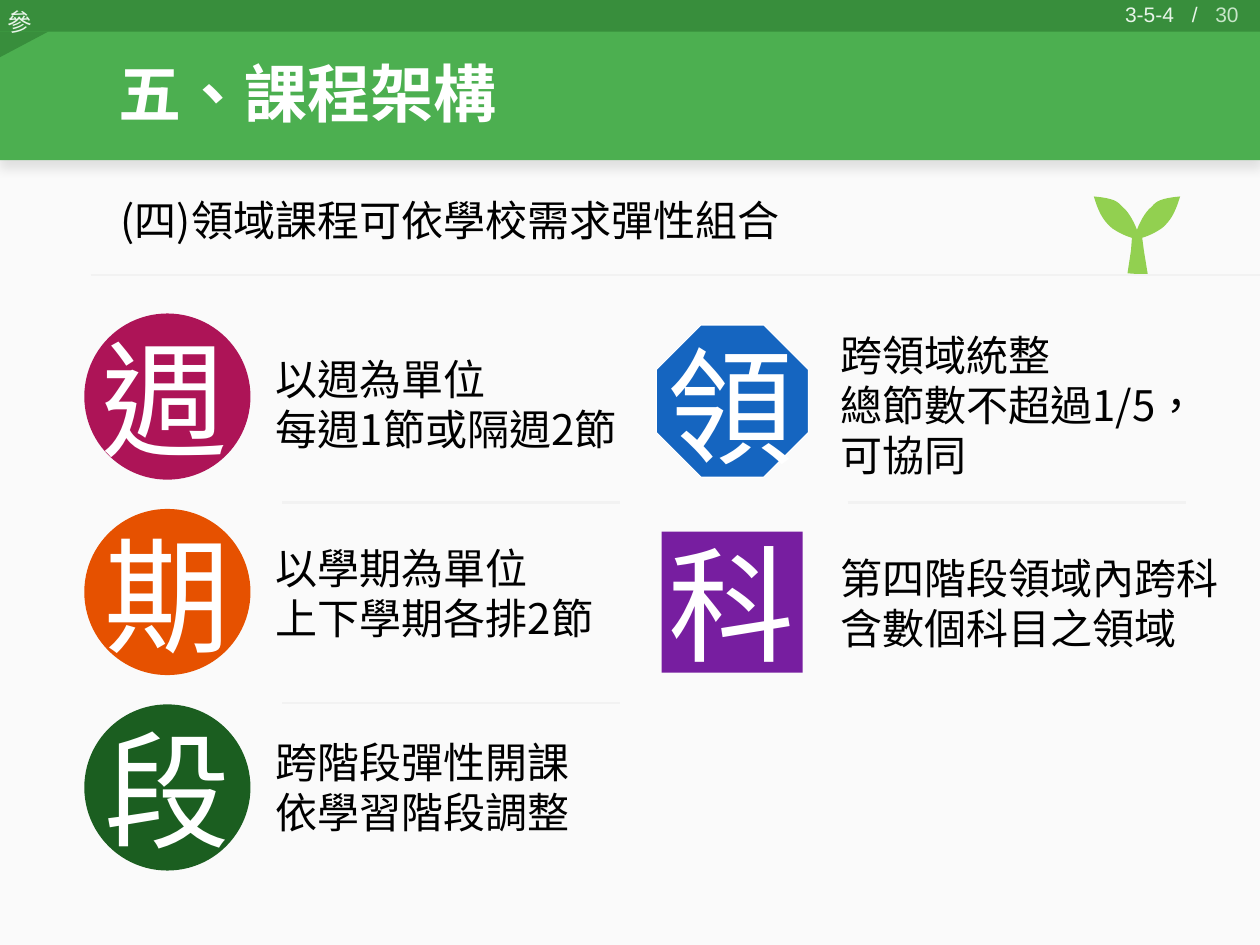
import pptx
import pptx.util
import pptx.dml.color
import pptx.enum.shapes
import pptx.enum.text
import pptx.oxml
import pptx.oxml.ns
from dataclasses import dataclass

Cm, Pt = pptx.util.Cm, pptx.util.Pt
SHAPE = pptx.enum.shapes.MSO_SHAPE
ALIGN = pptx.enum.text.PP_ALIGN
ANCHOR = pptx.enum.text.MSO_ANCHOR


@dataclass(frozen=True)
class Theme:
    cjk: str = "Noto Sans CJK SC"
    latin: str = "Arial"
    title_size: int = 36
    body_size: int = 24
    badge_size: int = 72
    tag_size: int = 14
    number_size: int = 12
    line_height: float = 1.19
    paper: str = "FAFAFA"
    band: str = "4CAF50"
    dark_band: str = "388E3C"
    white: str = "FFFFFF"
    black: str = "000000"
    pale: str = "E8F5E9"
    pale_green: str = "C8E6C9"
    rule: str = "F2F2F2"
    sprout: str = "92D050"


THEME = Theme()

TITLE = "五、課程架構"
HEADING = "(四)領域課程可依學校需求彈性組合"

# shape, colour, (left, top, side), glyph, glyph (left, top), text (left, top), lines
TOPICS = [
    (SHAPE.OVAL, "AD1457", (1.7, 6.32, 3.35), "週", (1.8, 6.38), (5.31, 7.01),
     ["以週為單位", "每週1節或隔週2節"]),
    (SHAPE.OVAL, "E65100", (1.7, 10.26, 3.35), "期", (1.85, 10.34), (5.31, 10.82),
     ["以學期為單位", "上下學期各排2節"]),
    (SHAPE.OVAL, "1B5E20", (1.7, 14.2, 3.35), "段", (1.85, 14.27), (5.31, 14.73),
     ["跨階段彈性開課", "依學習階段調整"]),
    (SHAPE.RECTANGLE, "771EA0", (13.34, 10.72, 2.84), "科", (13.23, 10.52), (16.69, 11.02),
     ["第四階段領域內跨科", "含數個科目之領域"]),
    (SHAPE.OCTAGON, "1565C0", (13.23, 6.55, 3.07), "領", (13.21, 6.53), (16.69, 6.53),
     ["跨領域統整", "總節數不超過1/5，可協同"]),
]

# left, right, height of each thin rule
RULES = [(1.83, 25.43, 5.54), (5.69, 12.5, 10.13), (5.69, 12.5, 14.17), (17.09, 23.9, 10.13)]

CORNER = [(-0.03, 0.64), (-0.03, 1.17), (0.97, 0.64)]
STEM = [(22.83, 4.67), (23.01, 4.67), (23.06, 5.05), (23.14, 5.54), (22.73, 5.51), (22.8, 5.05)]
LEAF_START = (22.94, 4.8)
LEAF_CURVES = [
    ((22.99, 4.75), (22.83, 4.37), (22.68, 4.22)),
    ((22.53, 4.09), (22.56, 4.01), (22.05, 3.96)),
    ((22.15, 4.29), (22.23, 4.42), (22.38, 4.57)),
    ((22.53, 4.7), (22.89, 4.85), LEAF_START),
]
SPROUT_AXIS = 22.92


def rgb(code):
    return pptx.dml.color.RGBColor.from_string(code)


def shadow_xml(blur, distance, alpha):
    return pptx.oxml.parse_xml(
        f'<a:effectLst {pptx.oxml.ns.nsdecls("a")}><a:outerShdw blurRad="{Pt(blur)}" '
        f'dist="{Pt(distance)}" dir="5400000" algn="t" rotWithShape="0"><a:srgbClr val="000000">'
        f'<a:alpha val="{alpha * 1000}"/></a:srgbClr></a:outerShdw></a:effectLst>')


def add_xml(parent, markup):
    parent.append(pptx.oxml.parse_xml(markup.replace("/>", f' {pptx.oxml.ns.nsdecls("a")}/>', 1)))


def paint(shape, color):
    shape.shadow.inherit = False
    shape.fill.solid()
    shape.fill.fore_color.rgb = rgb(color)
    shape.line.fill.background()
    return shape


def add_block(page, kind, box, color):
    return paint(page.shapes.add_shape(kind, *map(Cm, box)), color)


def add_outline(page, points, color):
    start, *rest = [(Cm(x), Cm(y)) for x, y in points]
    builder = page.shapes.build_freeform(*start)
    builder.add_line_segments(rest, close=True)
    return paint(builder.convert_to_shape(), color)


def trace_curves(start, curves, steps=10):
    """Return points along a chain of cubic curves."""
    points = [start]
    for first, second, end in curves:
        origin = points[-1]
        for step in range(1, steps + 1):
            t = step / steps
            weights = ((1 - t) ** 3, 3 * t * (1 - t) ** 2, 3 * t ** 2 * (1 - t), t ** 3)
            points.append(tuple(sum(w * p[axis] for w, p in zip(weights, (origin, first, second, end)))
                                for axis in (0, 1)))
    return points


def write(shape, text, size, color, font=THEME.cjk, align=ALIGN.LEFT, bold=False,
          anchor=ANCHOR.TOP, wrap=True):
    frame = shape.text_frame
    frame.text = text
    frame.word_wrap = wrap
    frame.vertical_anchor = anchor
    for para in frame.paragraphs:
        para.alignment = align
        para.space_before = Pt(0)
        if font == THEME.cjk:
            para.line_spacing = Pt(round(size * THEME.line_height, 1))
        for span in para.runs:
            span.font.size, span.font.bold = Pt(size), bold
            span.font.color.rgb = rgb(color)
            span.font.name = font
            properties = span._r.get_or_add_rPr()
            properties.set("lang", "zh-TW")
            add_xml(properties, f'<a:ea typeface="{font}"/>')
    return shape


def add_text(page, box, *args, **options):
    return write(page.shapes.add_textbox(*map(Cm, box)), *args, **options)


def place(shape, box):
    shape.left, shape.top, shape.width, shape.height = map(Cm, box)
    shape._element.getparent().append(shape._element)  # bring to front


def add_backdrop(page):
    add_block(page, SHAPE.RECTANGLE, (-0.03, 1.12, 25.47, 17.93), THEME.paper)
    band = add_block(page, SHAPE.RECTANGLE, (-0.03, 0, 25.43, 3.23), THEME.band)
    properties = band._element.spPr
    properties.replace(properties.find(pptx.oxml.ns.qn("a:effectLst")), shadow_xml(6, 4, 10))
    add_block(page, SHAPE.RECTANGLE, (-0.03, -0.05, 25.43, 0.69), THEME.dark_band)
    add_outline(page, CORNER, THEME.dark_band)
    add_text(page, (-0.1, 0.03, 1.02, 0.86), "參", THEME.tag_size, THEME.pale, wrap=False)


def add_headings(page):
    title, heading = page.shapes.title, page.placeholders[1]
    place(heading, (2.18, 3.81, 20.75, 1.27))
    write(heading, HEADING, THEME.body_size, THEME.black)
    indent = heading.text_frame.paragraphs[0]._p.get_or_add_pPr()
    indent.set("marL", "0")
    indent.set("indent", "0")
    add_xml(indent, "<a:buNone/>")
    place(title, (2.13, 0.53, 9.78, 2.69))
    write(title, TITLE, THEME.title_size, THEME.white, bold=True, anchor=ANCHOR.MIDDLE)
    properties = title.text_frame.paragraphs[0].runs[0]._r.get_or_add_rPr()
    properties.find(pptx.oxml.ns.qn("a:solidFill")).addnext(shadow_xml(4, 3, 40))


def add_topic(page, kind, color, badge, glyph, glyph_at, text_at, lines):
    left, top, side = badge
    shape = add_block(page, kind, (left, top, side, side), color)
    if kind == SHAPE.OCTAGON:
        shape.line.color.rgb = rgb(THEME.white)
        shape.line.width = Pt(0.75)
    add_text(page, (*glyph_at, 3.07, 3.33), glyph, THEME.badge_size, THEME.white, wrap=False)
    add_text(page, (*text_at, 8.31, 2.31), "\n".join(lines), THEME.body_size, THEME.black)


def add_sprout(page):
    leaf = trace_curves(LEAF_START, LEAF_CURVES)
    mirrored = [(2 * SPROUT_AXIS - x, y) for x, y in leaf]
    for points in (leaf, STEM, mirrored):
        add_outline(page, points, THEME.sprout)


def add_page_number(page):
    add_text(page, (19.3, -0.23, 5.92, 1.02), "30", THEME.number_size, THEME.pale_green,
             font=THEME.latin, align=ALIGN.RIGHT, anchor=ANCHOR.MIDDLE)
    section = add_text(page, (21.62, -0.1, 2.9, 0.76), "3-5-4\t/", THEME.number_size, THEME.pale,
                       font=THEME.latin)
    section.text_frame.margin_left = Cm(1.06)
    tabs = pptx.oxml.parse_xml(f'<a:tabLst {pptx.oxml.ns.nsdecls("a")}>'
                               f'<a:tab pos="{Cm(1.35)}" algn="l"/></a:tabLst>')
    section.text_frame.paragraphs[0]._p.get_or_add_pPr().append(tabs)


def add_rule(page, left, right, height):
    rule = page.shapes.add_connector(pptx.enum.shapes.MSO_CONNECTOR.STRAIGHT,
                                     Cm(left), Cm(height), Cm(right), Cm(height))
    rule.line.color.rgb = rgb(THEME.rule)
    rule.line.width = Pt(1.5)
    add_xml(rule._element.spPr, "<a:effectLst/>")


def main():
    deck = pptx.Presentation()
    deck.slide_width, deck.slide_height = Cm(25.4), Cm(19.05)
    page = deck.slides.add_slide(deck.slide_layouts[1])
    add_backdrop(page)
    add_headings(page)
    for topic in TOPICS:
        add_topic(page, *topic)
    add_sprout(page)
    add_page_number(page)
    for rule in RULES:
        add_rule(page, *rule)
    deck.save("out.pptx")


if __name__ == "__main__":
    main()
